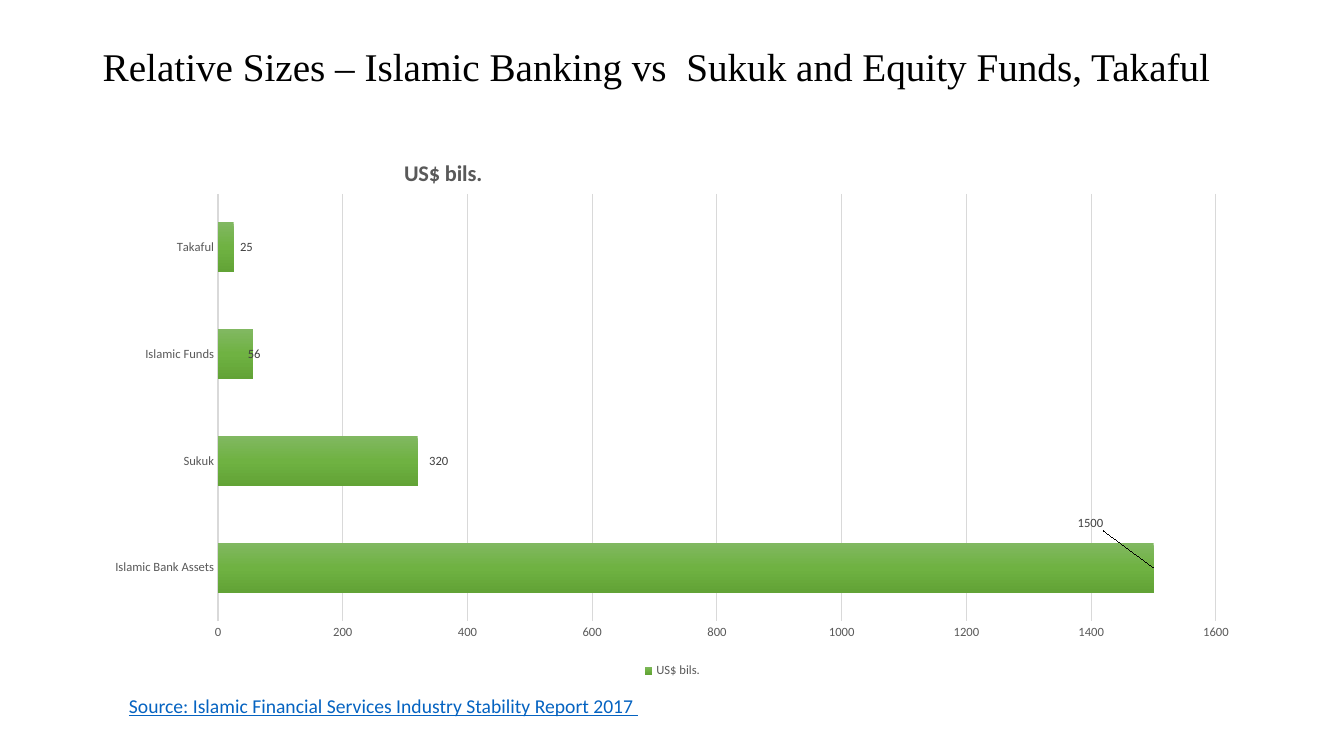
from copy import deepcopy
from dataclasses import dataclass

from lxml import etree
from pptx import Presentation
from pptx.chart.data import CategoryChartData
from pptx.dml.color import RGBColor
from pptx.enum.chart import (XL_CHART_TYPE, XL_LABEL_POSITION,
                             XL_LEGEND_POSITION, XL_TICK_MARK)
from pptx.enum.text import MSO_ANCHOR
from pptx.oxml.ns import qn
from pptx.util import Cm, Pt

BARS = XL_CHART_TYPE.BAR_CLUSTERED
INSIDE = XL_LABEL_POSITION.INSIDE_END
BOTTOM = XL_LEGEND_POSITION.BOTTOM
NONE = XL_TICK_MARK.NONE
MIDDLE = MSO_ANCHOR.MIDDLE


@dataclass(frozen=True)
class Theme:
    """Colours, fonts and type sizes of the slide."""
    ink: str = "000000"
    label: str = "404040"
    grey: str = "595959"
    rule: str = "D9D9D9"
    link: str = "0563C1"
    bar: tuple = ((0, "81B861"), (0.5, "6FB242"), (1, "62A336"))
    serif: str = "Times New Roman"
    sans: str = "Calibri"
    head: int = 28
    note: int = 14
    title: int = 16
    base: int = 10
    small: int = 9


THEME = Theme()
UNIT = "US$ bils."
SIZES = {"Islamic Bank Assets": 1500, "Sukuk": 320,
         "Islamic Funds": 56, "Takaful": 25}
SHIFTS = [(-0.04, -0.08), (0.03, 0), (0.01, 0), (0.02, 0)]


def put(item, values):
    """Set every attribute in values on item."""
    for name, value in values.items():
        setattr(item, name, value)


def style(font, size, tint, face=THEME.sans, **more):
    """Give a font its size, colour, face and further traits."""
    put(font, {"size": Pt(size), "name": face, **more})
    font.color.rgb = RGBColor.from_string(tint)


def rule(line, width):
    """Draw a line in the rule colour."""
    line.color.rgb = RGBColor.from_string(THEME.rule)
    line.width = Pt(width)


def add_text(slide, box, text, size, tint, face=THEME.sans, gap=1.0, **more):
    """Add one line of text in a box."""
    frame = slide.shapes.add_textbox(*map(Cm, box)).text_frame
    put(frame, {"word_wrap": True, "vertical_anchor": MIDDLE})
    para = frame.paragraphs[0]
    para.line_spacing = gap
    run = para.add_run()
    run.text = text
    style(run.font, size, tint, face, **more)


def make_layout(target=None, **spots):
    """Build a manual chart layout from its values."""
    layout = etree.Element(qn("c:layout"))
    manual = etree.SubElement(layout, qn("c:manualLayout"))
    if target:
        etree.SubElement(manual, qn("c:layoutTarget"), val=target)
        spots = {"xMode": "edge", "yMode": "edge", **spots}
    for name, value in spots.items():
        etree.SubElement(manual, qn(f"c:{name}"), val=str(value))
    return layout


def place(parent, layout, after=None):
    """Put a layout in its parent, in place of any old one."""
    for old in parent.findall(qn("c:layout")):
        parent.remove(old)
    mark = parent.find(qn(after)) if after else None
    parent.insert(0 if mark is None else parent.index(mark) + 1, layout)


def fill_bars(series):
    """Shade the bars from top to bottom."""
    fill = series.format.fill
    fill.gradient()
    fill.gradient_angle = 270
    stops = series._element.xpath(".//a:gsLst")[0]
    stops.append(deepcopy(stops[0]))
    for stop, (spot, tint) in zip(fill.gradient_stops, THEME.bar):
        stop.position = spot
        stop.color.rgb = RGBColor.from_string(tint)


def add_labels(plot, series):
    """Show the values and move each label to its spot."""
    plot.has_data_labels = True
    put(plot.data_labels, {"show_value": True, "position": INSIDE})
    style(plot.data_labels.font, THEME.small, THEME.label)
    for rank, (x, y) in enumerate(SHIFTS):
        label = series.points[rank].data_label
        label.position = INSIDE
        style(label.font, THEME.small, THEME.label)
        node = series._element.xpath(f".//c:dLbl[c:idx/@val='{rank}']")[0]
        place(node, make_layout(x=x, y=y), "c:idx")


def set_axes(chart):
    """Format both axes and the grid."""
    for axis in (chart.category_axis, chart.value_axis):
        put(axis, {"major_tick_mark": NONE, "minor_tick_mark": NONE})
        style(axis.tick_labels.font, THEME.small, THEME.grey)
    rule(chart.category_axis.format.line, 1)
    scale = chart.value_axis
    put(scale, {"minimum_scale": 0, "maximum_scale": 1600, "major_unit": 200,
                "has_major_gridlines": True})
    scale.format.line.fill.background()
    rule(scale.major_gridlines.format.line, 0.75)


def set_title(chart):
    """Write the chart title at its own spot."""
    chart.has_title = True
    title = chart.chart_title
    run = title.text_frame.paragraphs[0].add_run()
    run.text = UNIT
    style(run.font, THEME.title, THEME.grey, bold=True)
    spot = make_layout(xMode="edge", yMode="edge", x=0.265, y=0.05)
    place(title._element, spot, "c:tx")


def add_bars(slide, box):
    """Add the bar chart."""
    data = CategoryChartData()
    data.categories = list(SIZES)
    data.add_series(UNIT, list(SIZES.values()))
    chart = slide.shapes.add_chart(BARS, *map(Cm, box), data).chart
    style(chart.font, THEME.base, THEME.ink)
    set_title(chart)
    set_axes(chart)
    plot = chart.plots[0]
    put(plot, {"gap_width": 115, "overlap": -20, "vary_by_categories": False})
    fill_bars(plot.series[0])
    add_labels(plot, plot.series[0])
    chart.has_legend = True
    put(chart.legend, {"position": BOTTOM, "include_in_layout": False})
    style(chart.legend.font, THEME.small, THEME.grey)
    area = chart._chartSpace.xpath(".//c:plotArea")[0]
    place(area, make_layout("inner", x=0.108, y=0.122, w=0.861, h=0.769))


def main():
    """Build and save the slide."""
    deck = Presentation()
    put(deck, {"slide_width": Cm(33.87), "slide_height": Cm(19.05)})
    slide = deck.slides.add_slide(deck.slide_layouts[6])
    add_text(slide, (2.34, 1.02, 29.21, 1.42),
             "Relative Sizes – Islamic Banking vs  Sukuk and Equity Funds, Takaful",
             THEME.head, THEME.ink, THEME.serif, 0.9)
    add_bars(slide, (2.34, 3.18, 29.21, 14))
    add_text(slide, (3, 17.35, 22.58, 0.86),
             "Source: Islamic Financial Services Industry Stability Report 2017 ",
             THEME.note, THEME.link, underline=True)
    deck.save("out.pptx")


if __name__ == "__main__":
    main()
